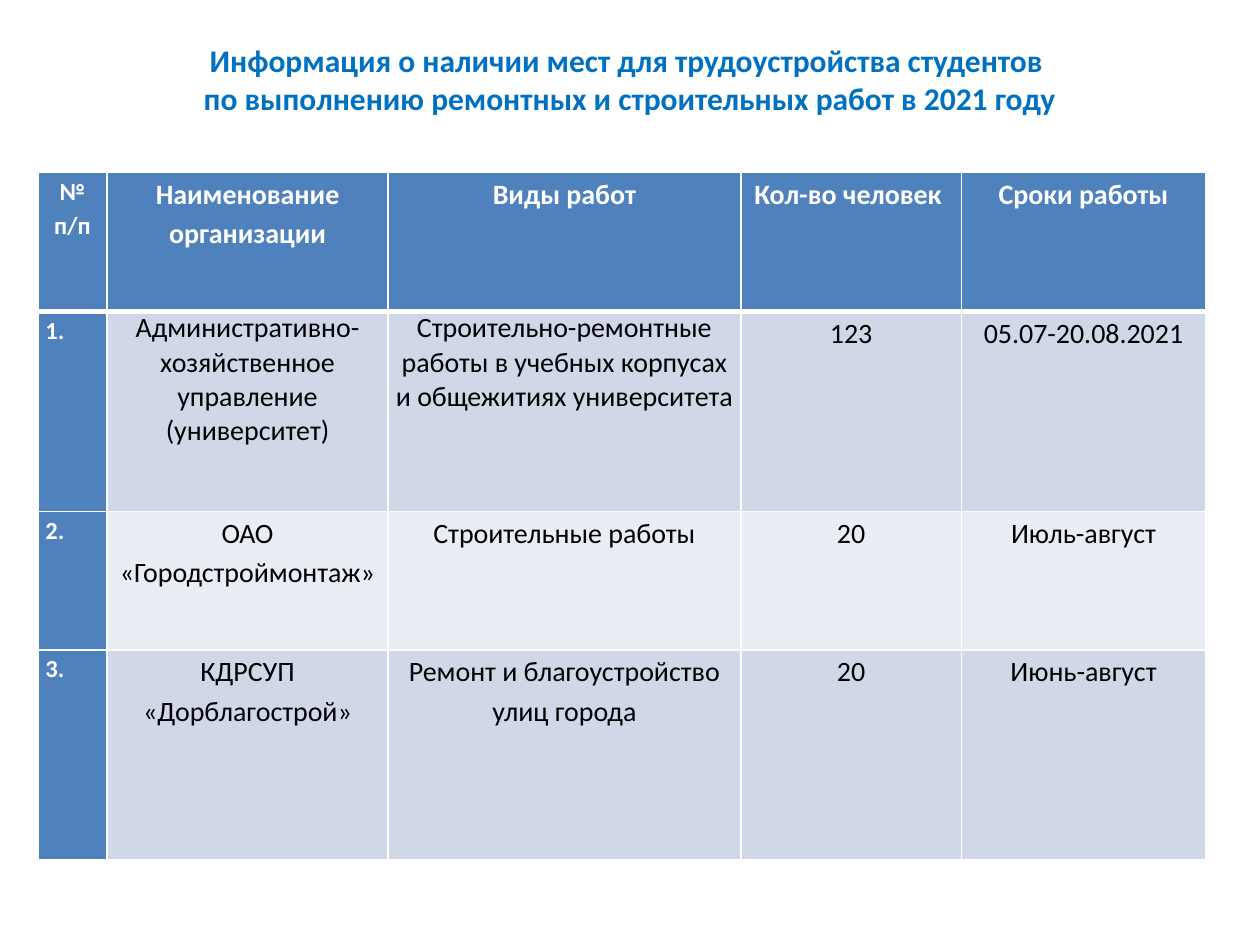
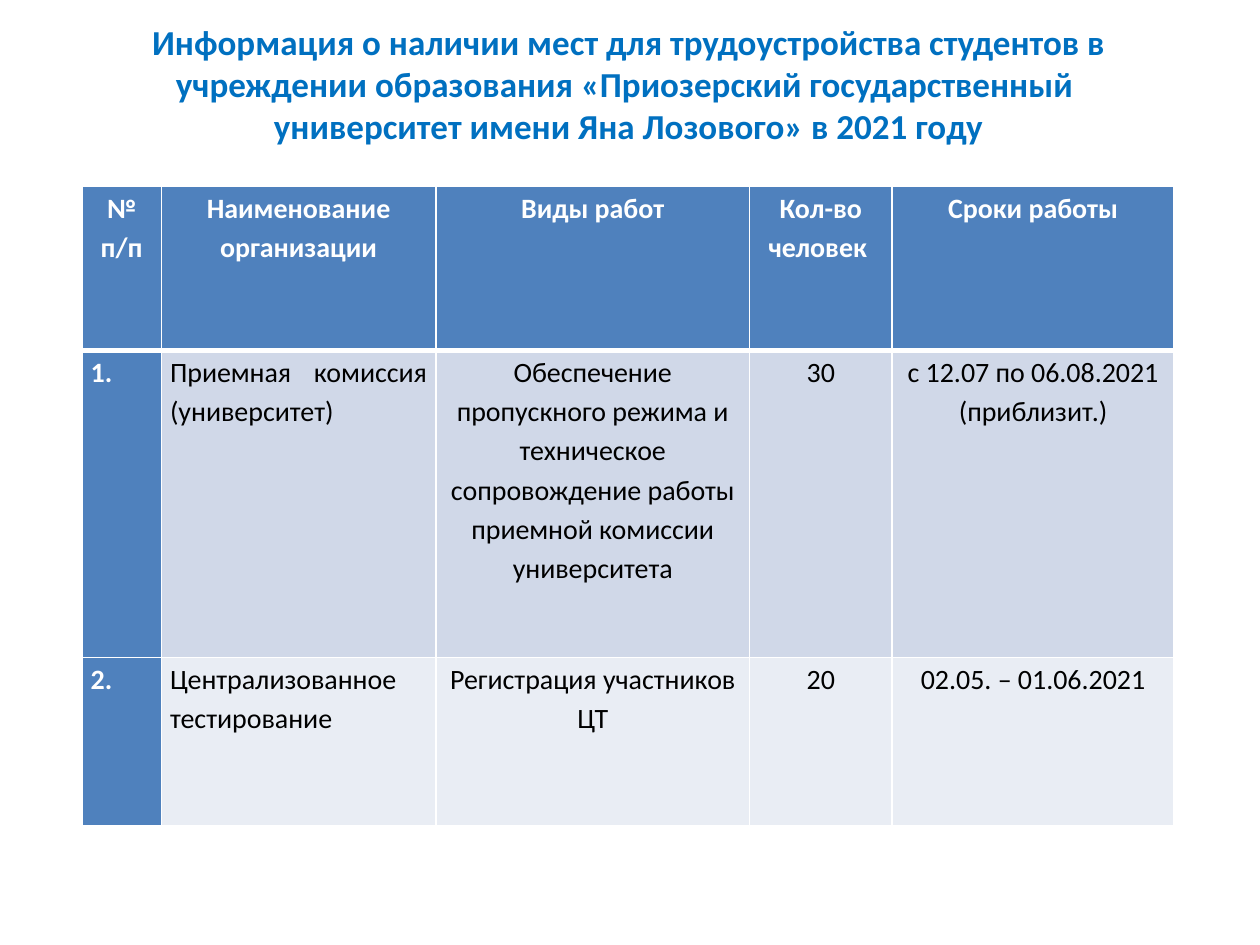
"""Builds two slides with tables of student job openings for 2021."""
from lxml import etree
from pptx import Presentation
from pptx.dml.color import RGBColor
from pptx.enum import text as t
from pptx.oxml import ns
from pptx.util import Inches, Pt

FONT = "Calibri"
TITLE_BLUE = RGBColor(0x00, 0x70, 0xC0)
HEADER_BLUE = RGBColor(0x4F, 0x81, 0xBD)
BANDS = [RGBColor(0xD0, 0xD8, 0xE8), RGBColor(0xE9, 0xED, 0xF4)]
WHITE = RGBColor(0xFF, 0xFF, 0xFF)
BLACK = RGBColor(0x00, 0x00, 0x00)
LEFT, CENTER, JUSTIFY = t.PP_ALIGN.LEFT, t.PP_ALIGN.CENTER, t.PP_ALIGN.JUSTIFY

HEADER = ["№ п/п", "Наименование организации", "Виды работ",
          "Кол-во человек ", "Сроки работы"]

SLIDES = [
    dict(
        title="Информация о наличии мест для трудоустройства студентов \v"
              "по выполнению ремонтных и строительных работ в 2021 году",
        title_box=(0.5, 0.17, 9, 0.91), title_size=18,
        origin=(0.3, 1.37), cols=[0.55, 2.23, 2.8, 1.75, 1.94],
        heights=[1.1, 1.59, 1.1, 1.66], inset=0.06, number_size=14,
        aligns=[LEFT, CENTER, CENTER, CENTER, CENTER],
        single_spaced=[(1, 1), (1, 2)],
        rows=[
            ["1.", "Административно-хозяйственное управление (университет)",
             "Строительно-ремонтные работы в учебных корпусах и общежитиях университета",
             "123", "05.07-20.08.2021"],
            ["2.", "ОАО «Городстроймонтаж»", "Строительные работы", "20", "Июль-август"],
            ["3.", "КДРСУП «Дорблагострой»", "Ремонт и благоустройство улиц города",
             "20", "Июнь-август"],
        ],
    ),
    dict(
        title="Информация о наличии мест для трудоустройства студентов в "
              "учреждении образования «Приозерский государственный \v"
              "университет имени Яна Лозового» в 2021 году",
        title_box=(0.49, 0.1, 9, 1.12), title_size=20,
        origin=(0.65, 1.48), cols=[0.63, 2.18, 2.49, 1.13, 2.24],
        heights=[1.3, 2.44, 1.33], inset=0.07, number_size=16,
        aligns=[JUSTIFY, JUSTIFY, CENTER, CENTER, CENTER],
        single_spaced=[],
        rows=[
            ["1.", "Приемная комиссия (университет)",
             "Обеспечение пропускного режима и техническое сопровождение "
             "работы приемной комиссии университета",
             "30", "с 12.07 по 06.08.2021\n(приблизит.)"],
            ["2.", "Централизованное\nтестирование", "Регистрация участников ЦТ",
             "20", "02.05. – 01.06.2021"],
        ],
    ),
]


def style(p, size, color, bold, align):
    p.alignment = align
    p.font.name, p.font.size, p.font.bold = FONT, Pt(size), bold
    p.font.color.rgb = color


def add_borders(cell, row):
    widths = {"L": 1, "R": 1, "T": 3 if row == 1 else 1, "B": 3 if row == 0 else 1}
    for side, width in widths.items():
        ln = etree.SubElement(cell._tc.get_or_add_tcPr(), ns.qn(f"a:ln{side}"), w=str(Pt(width)))
        fill = etree.SubElement(ln, ns.qn("a:solidFill"))
        etree.SubElement(fill, ns.qn("a:srgbClr"), val=str(WHITE))


prs = Presentation()
prs.slide_width, prs.slide_height = Inches(10), Inches(7.5)

for d in SLIDES:
    s = prs.slides.add_slide(prs.slide_layouts[6])

    tf = s.shapes.add_textbox(*map(Inches, d["title_box"])).text_frame
    tf.word_wrap = True
    tf.vertical_anchor = t.MSO_ANCHOR.MIDDLE
    tf.text = d["title"]
    style(tf.paragraphs[0], d["title_size"], TITLE_BLUE, True, CENTER)

    rows = [HEADER] + d["rows"]
    size = sum(d["cols"]), sum(d["heights"])
    table = s.shapes.add_table(len(rows), len(HEADER),
                               *map(Inches, d["origin"] + size)).table
    table.first_col = True
    for column, width in zip(table.columns, d["cols"]):
        column.width = Inches(width)
    for row, height in zip(table.rows, d["heights"]):
        row.height = Inches(height)

    for i, values in enumerate(rows):
        for j, value in enumerate(values):
            cell = table.cell(i, j)
            heading = i == 0 or j == 0
            add_borders(cell, i)
            cell.fill.solid()
            cell.fill.fore_color.rgb = HEADER_BLUE if heading else BANDS[(i - 1) % 2]
            cell.margin_left = cell.margin_right = Inches(d["inset"])
            cell.margin_top = cell.margin_bottom = 0
            cell.text = value
            for p in cell.text_frame.paragraphs:
                style(p, d["number_size"] if j == 0 else 16,
                      WHITE if heading else BLACK, heading,
                      CENTER if i == 0 else d["aligns"][j])
                p.line_spacing = 1.0 if (i, j) in d["single_spaced"] else 1.15

prs.save("out.pptx")
